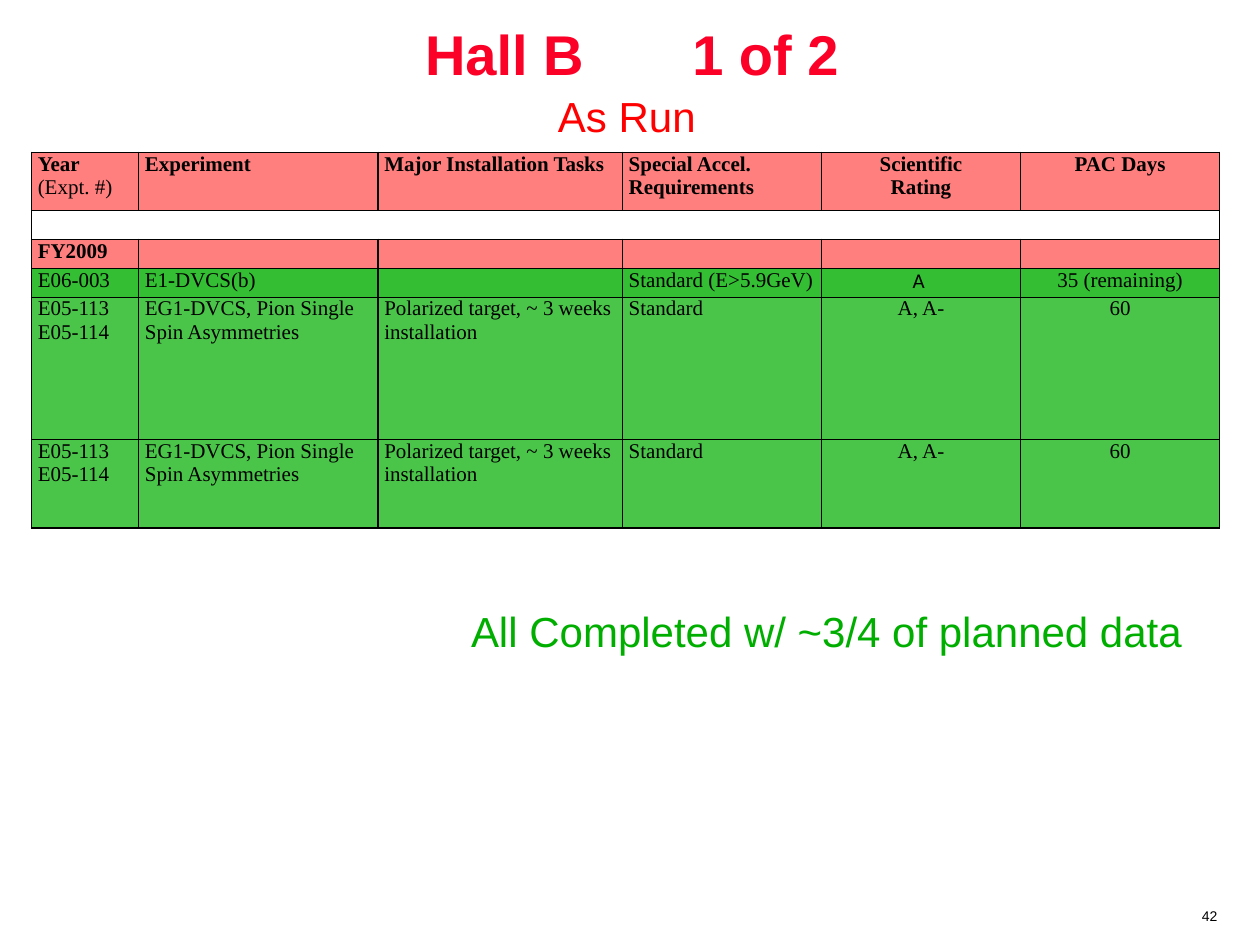
from dataclasses import dataclass

from lxml.etree import SubElement
from pptx import Presentation
from pptx.dml.color import RGBColor
from pptx.enum.text import MSO_ANCHOR, PP_ALIGN
from pptx.oxml.ns import qn
from pptx.util import Inches, Pt


@dataclass(frozen=True)
class Theme:
    sans: str = "Arial"
    serif: str = "Times New Roman"
    rating_font: str = "Calibri"
    black: str = "000000"
    title_red: str = "FC0128"
    red: str = "FF0000"
    green: str = "00AE00"
    title_size: int = 32
    note_size: int = 24
    table_size: int = 12
    number_size: int = 8
    border: float = 1


class SlideBuilder:
    def __init__(self, slide, theme):
        self.slide = slide
        self.theme = theme

    def style_run(self, run, size, color, name, bold=False):
        formats = {"size": Pt(size), "name": name, "bold": bold}
        for attribute, value in formats.items():
            setattr(run.font, attribute, value)
        run.font.color.rgb = RGBColor.from_string(color)

    def text(self, box, parts, size, color, align=PP_ALIGN.LEFT, bold=False,
             wrap=False, anchor=MSO_ANCHOR.TOP, spacing=0.8, before=2.4):
        """Add a one-paragraph text box and return its runs."""
        frame = self.slide.shapes.add_textbox(*map(Inches, box)).text_frame
        paragraph = frame.paragraphs[0]
        frame_formats = {"word_wrap": wrap, "vertical_anchor": anchor}
        paragraph_formats = {"alignment": align, "line_spacing": spacing,
                             "space_before": Pt(before)}
        for target, formats in ((frame, frame_formats),
                                (paragraph, paragraph_formats)):
            for attribute, value in formats.items():
                setattr(target, attribute, value)
        for part in parts:
            run = paragraph.add_run()
            run.text = part
            self.style_run(run, size, color, self.theme.sans, bold)
        return paragraph.runs

    def cell_borders(self, properties):
        for side in ("a:lnL", "a:lnR", "a:lnT", "a:lnB"):
            line = SubElement(properties, qn(side), w=str(Pt(self.theme.border)))
            fill = SubElement(line, qn("a:solidFill"))
            SubElement(fill, qn("a:srgbClr"), val=self.theme.black)

    def cell(self, cell, content, fill, align, bold, font):
        margins = {"margin_left": 0.05, "margin_right": 0.05,
                   "margin_top": 0, "margin_bottom": 0}
        for attribute, value in margins.items():
            setattr(cell, attribute, Inches(value))
        self.cell_borders(cell._tc.get_or_add_tcPr())
        if fill:
            color, opacity = fill
            cell.fill.solid()
            cell.fill.fore_color.rgb = RGBColor.from_string(color)
            swatch = cell._tc.tcPr.find(f"{qn('a:solidFill')}/{qn('a:srgbClr')}")
            SubElement(swatch, qn("a:alpha"), val=str(opacity * 1000))
        else:
            cell.fill.background()

        cell.text = content
        for paragraph in cell.text_frame.paragraphs:
            paragraph.alignment = align
            for run in paragraph.runs:
                self.style_run(run, self.theme.table_size, self.theme.black, font,
                               bold and not run.text.startswith("("))
            if not paragraph.runs:  # keeps empty rows at the table's type size
                SubElement(paragraph._p, qn("a:endParaRPr"),
                           sz=str(self.theme.table_size * 100))

    def table(self, box, widths, rows, left_columns):
        """Rows hold (height, fill, bold, texts); a row without fill is merged."""
        table = self.slide.shapes.add_table(
            len(rows), len(widths), *map(Inches, box)).table
        table.first_row = table.horz_banding = False
        for column, width in zip(table.columns, widths):
            column.width = Inches(width)
        for r, (height, fill, bold, texts) in enumerate(rows):
            table.rows[r].height = Inches(height)
            for c, content in enumerate(texts):
                align = PP_ALIGN.LEFT if c < left_columns else PP_ALIGN.CENTER
                font = self.theme.rating_font if content == "A " else self.theme.serif
                self.cell(table.cell(r, c), content, fill, align, bold, font)
            if not fill:
                table.cell(r, 0).merge(table.cell(r, len(widths) - 1))


def main():
    theme = Theme()
    presentation = Presentation()
    presentation.slide_width = Inches(10)
    presentation.slide_height = Inches(7.5)
    slide = presentation.slides.add_slide(presentation.slide_layouts[6])
    builder = SlideBuilder(slide, theme)

    # Page number
    builder.text((9.43, 7.18, 0.34, 0.21), ["42"], theme.number_size, theme.black,
                 align=PP_ALIGN.CENTER, before=0.8)

    # Experiment schedule
    heading = (theme.red, 50)
    remaining = (theme.green, 80)
    completed = (theme.green, 71)
    blank = [""] * 6
    asymmetries = ["E05-113\nE05-114", "EG1-DVCS, Pion Single Spin Asymmetries",
                   "Polarized target, ~ 3 weeks installation", "Standard",
                   "A, A-", "60"]
    schedule = [
        (0.46, heading, True, ["Year\n(Expt. #)", "Experiment",
                               "Major Installation Tasks",
                               "Special Accel. Requirements",
                               "Scientific\nRating", "PAC Days"]),
        (0.23, None, False, blank),
        (0.23, heading, True, ["FY2009"] + blank[1:]),
        (0.23, remaining, False, ["E06-003", "E1-DVCS(b)", "",
                                  "Standard (E>5.9GeV)", "A ", "35 (remaining)"]),
        (1.13, completed, False, asymmetries),
        (0.7, completed, False, asymmetries),
    ]
    builder.table((0.25, 1.21, 9.42, 2.98), [0.85, 1.9, 1.94, 1.58, 1.58, 1.58],
                  schedule, left_columns=4)

    # Title, with a widened space between hall and page count
    title = builder.text((0.95, 0.02, 8.13, 0.81), ["Hall B", " ", "1 of 2"],
                         theme.title_size, theme.title_red, align=PP_ALIGN.CENTER,
                         bold=True, wrap=True, anchor=MSO_ANCHOR.MIDDLE,
                         spacing=1.0, before=0)
    title[1].font._element.set("spc", "5300")

    # Status notes
    builder.text((3.64, 4.83, 5.9, 0.42), ["All Completed w/ ~3/4 of planned data"],
                 theme.note_size, theme.green)
    builder.text((4.33, 0.75, 1.31, 0.5), ["As Run"], theme.note_size, theme.red)

    presentation.save("out.pptx")


if __name__ == "__main__":
    main()
